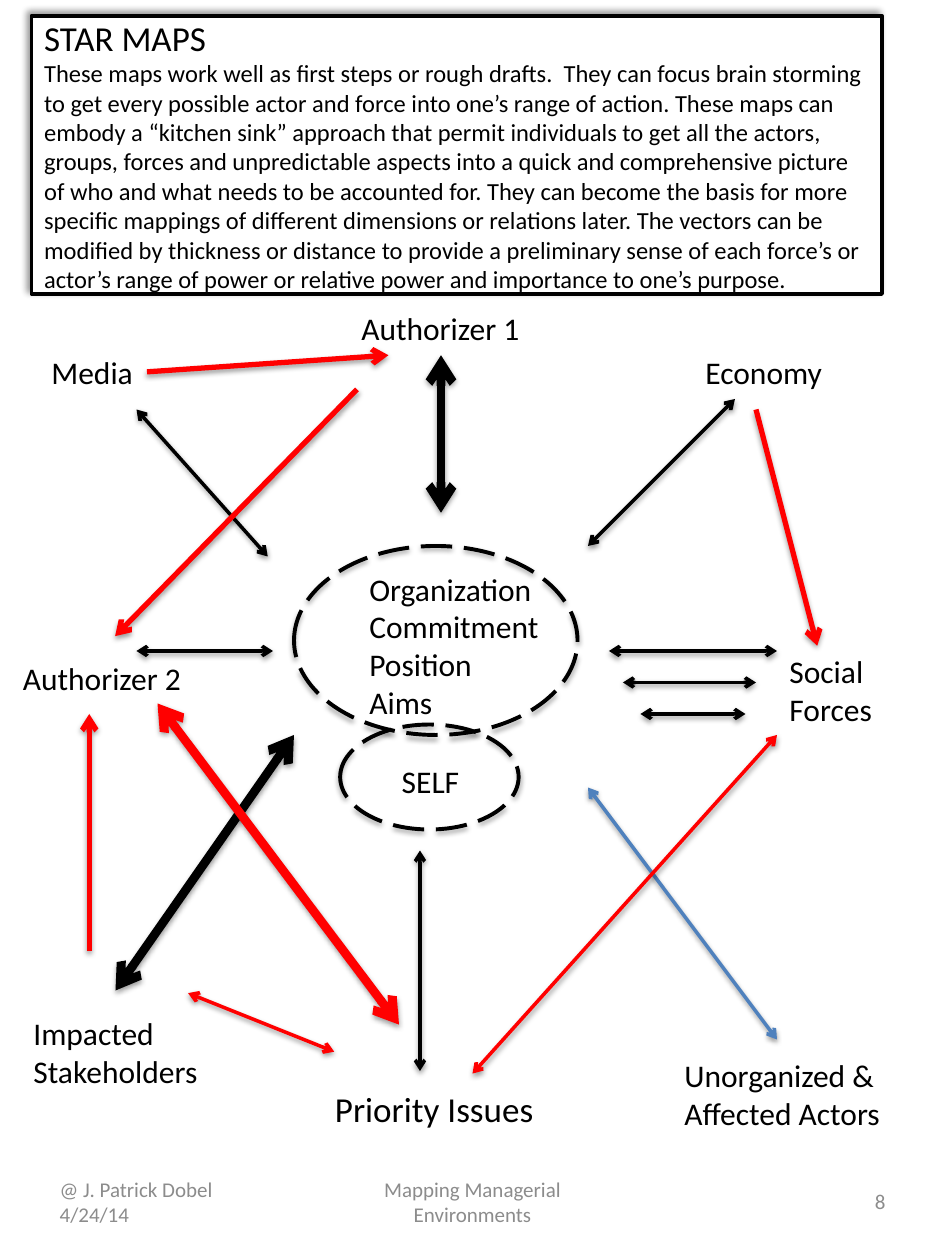
from dataclasses import dataclass

import pptx
import pptx.dml.color
import pptx.enum.dml
import pptx.enum.shapes
import pptx.enum.text
import pptx.oxml
import pptx.oxml.ns
import pptx.util

Pt = pptx.util.Pt
RGBColor = pptx.dml.color.RGBColor
Align = pptx.enum.text.PP_ALIGN
Anchor = pptx.enum.text.MSO_ANCHOR

BLACK = RGBColor(0x00, 0x00, 0x00)
WHITE = RGBColor(0xFF, 0xFF, 0xFF)
RED = RGBColor(0xFF, 0x00, 0x00)
BLUE = RGBColor(0x4F, 0x81, 0xBD)
GRAY = RGBColor(0x8C, 0x8C, 0x8C)
FONT = "Calibri"

TITLE = "STAR MAPS"
EXPLANATION = (
    "These maps work well as first steps or rough drafts.  They can focus brain storming "
    "to get every possible actor and force into one’s range of action. These maps can "
    "embody a “kitchen sink” approach that permit individuals to get all the actors, "
    "groups, forces and unpredictable aspects into a quick and comprehensive picture "
    "of who and what needs to be accounted for. They can become the basis for more "
    "specific mappings of different dimensions or relations later. The vectors can be "
    "modified by thickness or distance to provide a preliminary sense of each force’s or "
    "actor’s range of power or relative power and importance to one’s purpose."
)


@dataclass(frozen=True)
class Box:
    left: float
    top: float
    width: float
    height: float

    def lengths(self) -> tuple:
        return Pt(self.left), Pt(self.top), Pt(self.width), Pt(self.height)


@dataclass(frozen=True)
class Label:
    box: Box
    lines: tuple[str, ...]
    size: float = 18
    wrap: bool = False


@dataclass(frozen=True)
class Footer:
    box: Box
    text: str
    align: Align


@dataclass(frozen=True)
class Vector:
    start: tuple[float, float]
    end: tuple[float, float]
    weight: float = 2
    color: RGBColor = BLACK
    two_way: bool = True


@dataclass(frozen=True)
class Shadow:
    alpha: int
    blur: float
    distance: float
    angle: int


TITLE_SHADOW = Shadow(40, 4, 3, 225)
OVAL_SHADOW = Shadow(35, 3.1, 1.8, 90)
VECTOR_SHADOW = Shadow(38, 3.1, 1.6, 90)

TITLE_BOX = Box(18, 9, 486, 159)
OVALS = (Box(168, 312, 162, 108), Box(194.4, 414, 102, 60))

LABELS = (
    Label(Box(204, 322, 114, 138), ("Organization", "Commitment", "Position", "Aims"), wrap=True),
    Label(Box(222.5, 432, 47.5, 29), ("SELF",)),
    Label(Box(199.4, 173, 106.6, 29), ("Authorizer 1",)),
    Label(Box(6, 373, 106.6, 29), ("Authorizer 2",)),
    Label(Box(22.3, 198, 61.2, 29), ("Media",)),
    Label(Box(396, 198, 82.8, 29), ("Economy",)),
    Label(Box(444, 369, 80.6, 51), ("Social Forces",), wrap=True),
    Label(Box(12, 576, 110, 51), ("Impacted", "Stakeholders")),
    Label(Box(184.3, 618, 129, 31.5), ("Priority Issues",), size=20),
    Label(Box(384, 600, 129, 51), ("Unorganized &", "Affected Actors")),
)

FOOTERS = (
    Footer(Box(27, 667.5, 126, 38), "@ J. Patrick Dobel  4/24/14", Align.LEFT),
    Footer(Box(184.5, 667.5, 171, 38), "Mapping Managerial Environments", Align.CENTER),
    Footer(Box(387, 667.5, 126, 38), "8", Align.RIGHT),
)

VECTORS = (
    Vector((252, 203), (252, 293), 5),
    Vector((336, 312), (420, 228)),
    Vector((78, 234), (153, 318)),
    Vector((348, 372), (444, 372)),
    Vector((156, 372), (78, 372)),
    Vector((336, 450), (444, 594), color=BLUE),
    Vector((168, 420), (66, 566), 5),
    Vector((240, 486), (240, 612)),
    Vector((356, 390), (432, 390)),
    Vector((366, 408), (426, 408)),
    Vector((432, 234), (467, 369), 3, RED, two_way=False),
    Vector((84, 212.5), (222, 203), 3, RED, two_way=False),
    Vector((204, 222.5), (65.8, 363.5), 3, RED, two_way=False),
    Vector((51, 543.5), (51, 408), 3, RED, two_way=False),
    Vector((90, 402), (228, 585.5), 5, RED),
    Vector((444, 420), (270, 613.5), color=RED),
    Vector((107.5, 567.5), (191, 601), color=RED),
)


def add_shadow(shape, shadow: Shadow) -> None:
    """Put an outer shadow after the outline, which must already be set."""
    shape._element.spPr.append(pptx.oxml.parse_xml(
        f'<a:effectLst {pptx.oxml.ns.nsdecls("a")}>'
        f'<a:outerShdw blurRad="{Pt(shadow.blur)}" dist="{Pt(shadow.distance)}" '
        f'dir="{shadow.angle * 60000}" rotWithShape="0"><a:srgbClr val="{BLACK}">'
        f'<a:alpha val="{shadow.alpha * 1000}"/></a:srgbClr></a:outerShdw></a:effectLst>'
    ))


def add_run(paragraph, text: str, *, size: float, color: RGBColor = BLACK) -> None:
    run = paragraph.add_run()
    run.text = text
    run.font.name = FONT
    run.font.size = Pt(size)
    run.font.color.rgb = color


def add_text(slide, box: Box, lines: tuple[str, ...], *, size: float, color: RGBColor = BLACK,
             align: Align = Align.LEFT, anchor: Anchor = Anchor.TOP, wrap: bool = True) -> None:
    frame = slide.shapes.add_textbox(*box.lengths()).text_frame
    frame.word_wrap = wrap
    frame.vertical_anchor = anchor
    for index, line in enumerate(lines):
        paragraph = frame.add_paragraph() if index else frame.paragraphs[0]
        paragraph.alignment = align
        add_run(paragraph, line, size=size, color=color)


def fill_title(slide) -> None:
    title = slide.shapes.title
    title.left, title.top, title.width, title.height = TITLE_BOX.lengths()
    title.fill.solid()
    title.fill.fore_color.rgb = WHITE
    title.line.color.rgb = BLACK
    title.line.width = Pt(2)
    add_shadow(title, TITLE_SHADOW)
    frame = title.text_frame
    frame.word_wrap = True
    frame.auto_size = pptx.enum.text.MSO_AUTO_SIZE.NONE
    frame.vertical_anchor = Anchor.MIDDLE
    paragraph = frame.paragraphs[0]
    paragraph.alignment = Align.LEFT
    add_run(paragraph, TITLE, size=20)
    paragraph.add_line_break()
    add_run(paragraph, EXPLANATION, size=14)


def add_oval(slide, box: Box) -> None:
    oval = slide.shapes.add_shape(pptx.enum.shapes.MSO_SHAPE.OVAL, *box.lengths())
    oval.fill.background()
    oval.line.color.rgb = BLACK
    oval.line.width = Pt(2.25)
    oval.line.dash_style = pptx.enum.dml.MSO_LINE.LONG_DASH
    add_shadow(oval, OVAL_SHADOW)


def add_vector(slide, vector: Vector) -> None:
    ends = [Pt(value) for value in vector.start + vector.end]
    arrow = slide.shapes.add_connector(pptx.enum.shapes.MSO_CONNECTOR.STRAIGHT, *ends)
    arrow.line.color.rgb = vector.color
    arrow.line.width = Pt(vector.weight)
    outline = arrow.line._get_or_add_ln()
    for tag in ("headEnd", "tailEnd") if vector.two_way else ("tailEnd",):
        outline.append(pptx.oxml.parse_xml(
            f'<a:{tag} {pptx.oxml.ns.nsdecls("a")} type="arrow"/>'))
    add_shadow(arrow, VECTOR_SHADOW)


def main() -> None:
    deck = pptx.Presentation()
    deck.slide_width, deck.slide_height = Pt(540), Pt(720)
    slide = deck.slides.add_slide(deck.slide_layouts[5])
    fill_title(slide)
    for oval in OVALS:
        add_oval(slide, oval)
    for label in LABELS:
        add_text(slide, label.box, label.lines, size=label.size, wrap=label.wrap)
    for footer in FOOTERS:
        add_text(slide, footer.box, (footer.text,), size=12, color=GRAY,
                 align=footer.align, anchor=Anchor.MIDDLE)
    for vector in VECTORS:
        add_vector(slide, vector)
    deck.save("out.pptx")


if __name__ == "__main__":
    main()
